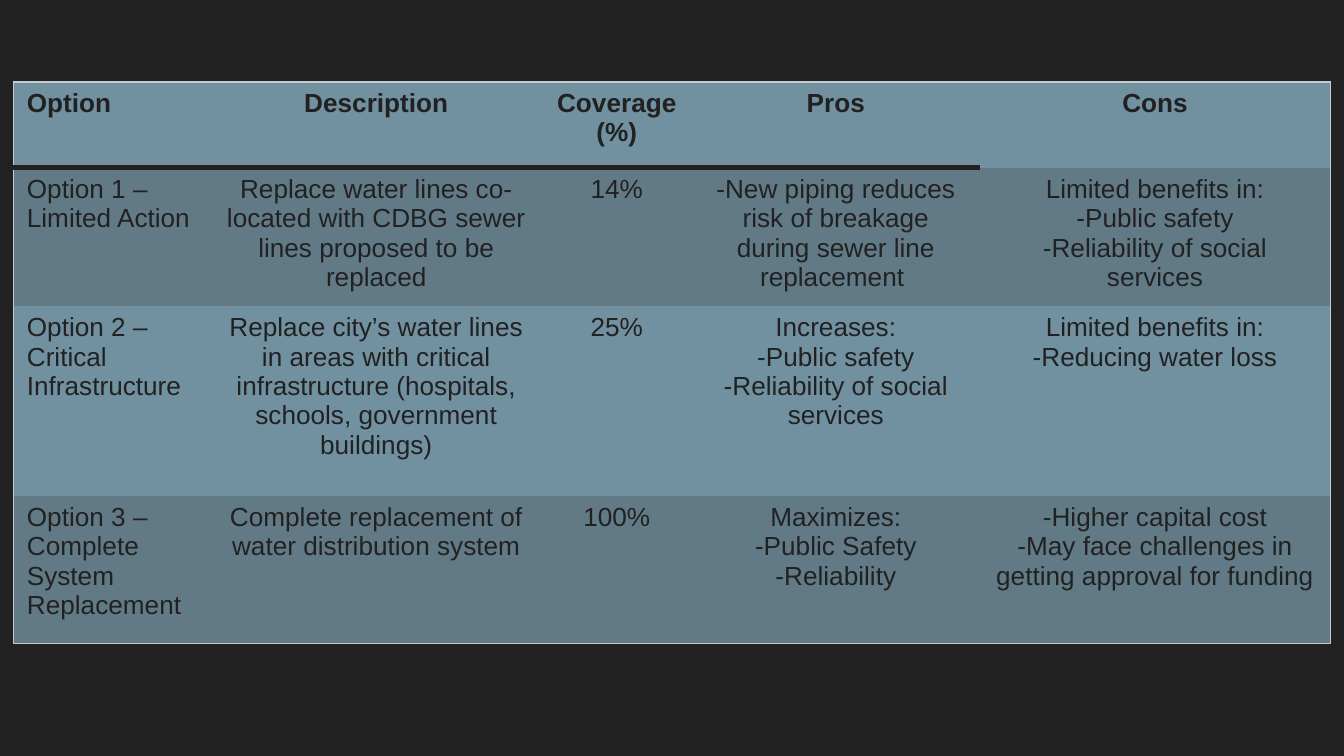
from lxml import etree
from pptx import Presentation
from pptx.dml.color import RGBColor
from pptx.enum.text import PP_ALIGN
from pptx.oxml.ns import qn
from pptx.util import Inches, Pt

COLORS = {"dark": "212121", "blue": "7190A0", "shade": "627A86", "edge": "C5CCD1"}
NO_STYLE = "{2D5ABB26-0587-4C30-8999-92F81FD0307C}"
COL_WIDTHS = [1.47, 2.46, 1.12, 2.14, 2.61]
ROW_HEIGHTS = [0.64, 1.03, 1.41, 1.1]
# Each line of a cell is a paragraph
OPTIONS = [
    ["Option", "Description", "Coverage (%)", "Pros", "Cons"],
    ["Option 1 – Limited Action",
     "Replace water lines co-located with CDBG sewer lines proposed to be replaced",
     "14%",
     "-New piping reduces risk of breakage during sewer line replacement ",
     "Limited benefits in:\n-Public safety\n-Reliability of social services"],
    ["Option 2 – Critical Infrastructure",
     "Replace city’s water lines in areas with critical infrastructure "
     "(hospitals, schools, government buildings)",
     "25%",
     "Increases:\n-Public safety\n-Reliability of social services",
     "Limited benefits in:\n-Reducing water loss"],
    ["Option 3 – Complete System Replacement",
     "Complete replacement of water distribution system",
     "100%",
     "Maximizes:\n-Public Safety\n-Reliability",
     "-Higher capital cost\n-May face challenges in getting approval for funding"],
]


def rgb(name):
    return RGBColor.from_string(COLORS[name])


def set_borders(cell, borders):
    """Draw borders given as (side, colour, points), in the order L, R, T, B."""
    tc_pr = cell._tc.get_or_add_tcPr()
    for i, (side, color, width) in enumerate(borders):
        ln = etree.Element(qn(f"a:ln{side}"), w=str(Pt(width)))
        fill = etree.SubElement(ln, qn("a:solidFill"))
        etree.SubElement(fill, qn("a:srgbClr"), val=COLORS[color])
        tc_pr.insert(i, ln)


def cell_borders(row, col):
    """Thin outer frame, with a thick rule under the header except for Cons."""
    last_row, last_col = len(ROW_HEIGHTS) - 1, len(COL_WIDTHS) - 1
    sides = [("L", col == 0), ("R", col == last_col),
             ("T", row == 0), ("B", row == last_row)]
    borders = [(side, "edge", 0.75) for side, outer in sides if outer]
    if row == 0 and col < last_col:
        borders.append(("B", "dark", 3))
    return borders


def fill_cell(cell, text, row, col):
    cell.fill.solid()
    cell.fill.fore_color.rgb = rgb("shade" if row % 2 else "blue")
    tf = cell.text_frame
    for i, line in enumerate(text.split("\n")):
        p = tf.add_paragraph() if i else tf.paragraphs[0]
        p.alignment = PP_ALIGN.CENTER if col else PP_ALIGN.LEFT
        r = p.add_run()
        r.text = line
        r.font.name = "Arial"
        r.font.size = Pt(14)
        r.font.bold = row == 0
        r.font.color.rgb = rgb("dark")
    set_borders(cell, cell_borders(row, col))


def add_options_table(s, left, top):
    frame = s.shapes.add_table(
        len(ROW_HEIGHTS), len(COL_WIDTHS), Inches(left), Inches(top),
        Inches(sum(COL_WIDTHS)), Inches(sum(ROW_HEIGHTS)))
    table = frame.table
    table.first_row = table.horz_banding = False
    table._tbl.tblPr.find(qn("a:tableStyleId")).text = NO_STYLE
    for column, width in zip(table.columns, COL_WIDTHS):
        column.width = Inches(width)
    for row, height in zip(table.rows, ROW_HEIGHTS):
        row.height = Inches(height)
    for i, texts in enumerate(OPTIONS):
        for j, text in enumerate(texts):
            fill_cell(table.cell(i, j), text, i, j)


def main():
    prs = Presentation()
    prs.slide_width = Inches(10)
    prs.slide_height = Inches(10 * 9 / 16)
    s = prs.slides.add_slide(prs.slide_layouts[6])
    s.background.fill.solid()
    s.background.fill.fore_color.rgb = rgb("dark")
    add_options_table(s, 0.1, 0.61)
    prs.save("out.pptx")


if __name__ == "__main__":
    main()
